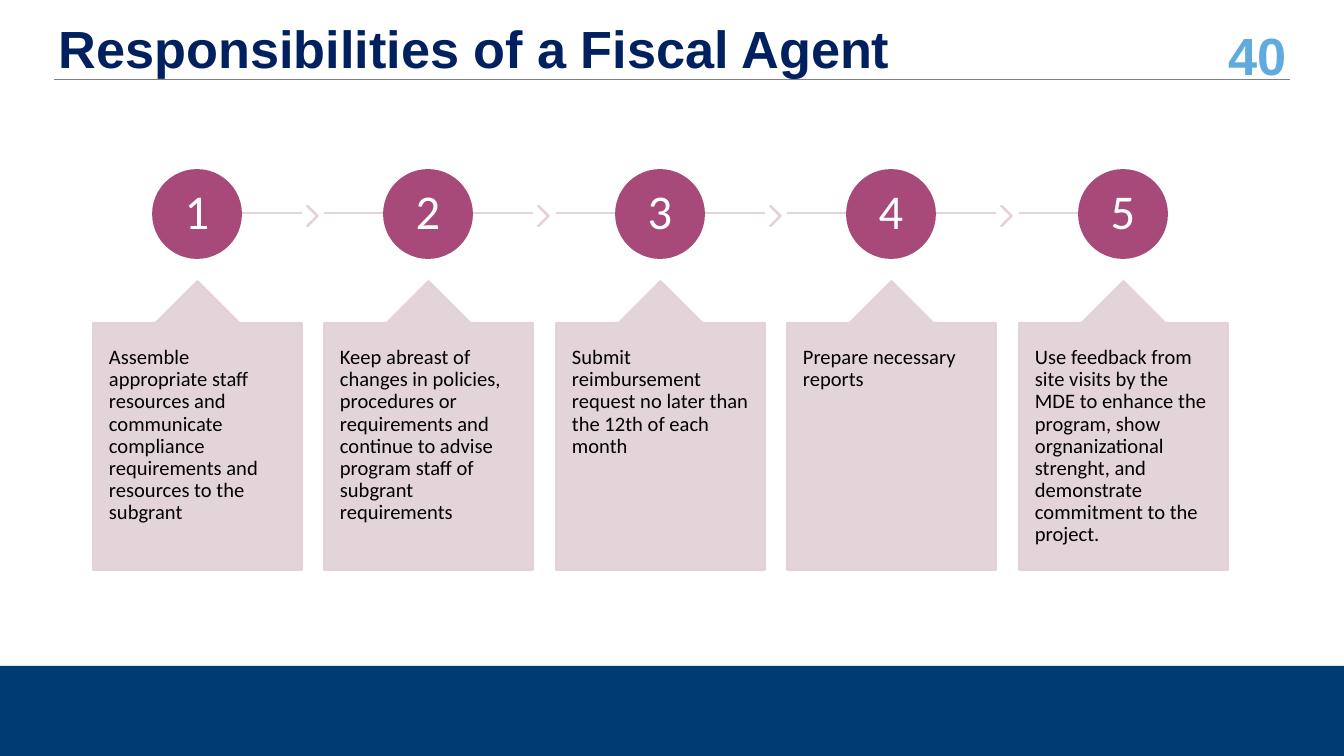
from lxml.etree import SubElement
from pptx import Presentation
from pptx.dml.color import RGBColor
from pptx.enum.shapes import MSO_CONNECTOR as LINE, MSO_SHAPE as SHAPE
from pptx.enum.text import MSO_ANCHOR as ANCHOR, MSO_AUTO_SIZE as FIT, PP_ALIGN as ALIGN
from pptx.oxml.ns import qn
from pptx.util import Emu, Pt

COLORS = {"navy": "002060", "bar": "003B71", "sky": "5FAADE", "gray": "808080",
          "plum": "A74979", "mauve": "E1D0D7", "white": "FFFFFF", "black": "000000"}

STEPS = [
    "Assemble appropriate staff resources and communicate compliance requirements "
    "and resources to the subgrant",
    "Keep abreast of changes in policies, procedures or requirements and continue "
    "to advise program staff of subgrant requirements",
    "Submit reimbursement request no later than the 12th of each month",
    "Prepare necessary reports",
    "Use feedback from site visits by the MDE to enhance the program, show "
    "orgnanizational strenght, and demonstrate commitment to the project.",
]


def px(n):
    return Emu(round(n * 914400 / 134.4))


class Deck:
    """Holds the style and the current slide, and draws each kind of element."""

    def __init__(self, width, height):
        self.prs = Presentation()
        self.prs.slide_width, self.prs.slide_height = px(width), px(height)
        self.s = self.prs.slides.add_slide(self.prs.slide_layouts[5])

    def color(self, name):
        return RGBColor.from_string(COLORS[name])

    def fade(self, sp, alpha):
        for clr in sp._element.spPr.iter(qn("a:srgbClr")):
            SubElement(clr, qn("a:alpha")).set("val", str(alpha * 1000))

    def fill_text(self, sp, text, size, color, font="Calibri", bold=False,
                  align=ALIGN.LEFT, anchor=ANCHOR.MIDDLE, insets=(13, 7), spacing=0.9):
        tf = sp.text_frame
        tf.word_wrap, tf.auto_size, tf.vertical_anchor = True, FIT.NONE, anchor
        tf.margin_left = tf.margin_right = px(insets[0])
        tf.margin_top = tf.margin_bottom = px(insets[1])
        p = tf.paragraphs[0]
        p.alignment, p.line_spacing = align, spacing
        r = p.add_run()
        r.text = text
        r.font.name, r.font.size, r.font.bold = font, Pt(size), bold
        r.font.color.rgb = self.color(color)

    def title(self, box, text):
        sp = self.s.shapes.title
        sp.left, sp.top, sp.width, sp.height = map(px, box)
        self.fill_text(sp, text, 28, "navy", "Arial", True)

    def text(self, box, text, size, color, **style):
        sp = self.s.shapes.add_textbox(*map(px, box))
        self.fill_text(sp, text, size, color, **style)

    def shape(self, kind, box, color, adjustments=(), alpha=100, outline=True):
        sp = self.s.shapes.add_shape(kind, *map(px, box))
        sp.shadow.inherit = False
        for i, value in enumerate(adjustments):
            sp.adjustments[i] = value
        sp.fill.solid()
        sp.fill.fore_color.rgb = self.color(color)
        if outline:
            sp.line.color.rgb = self.color(color)
            sp.line.width = Pt(1)
        else:
            sp.line.fill.background()
        if alpha < 100:
            self.fade(sp, alpha)
        return sp

    def line(self, x1, x2, y, color, width, alpha=100):
        cn = self.s.shapes.add_connector(LINE.STRAIGHT, px(x1), px(y), px(x2), px(y))
        cn.line.color.rgb = self.color(color)
        cn.line.width = Pt(width)
        SubElement(cn._element.spPr, qn("a:effectLst"))
        if alpha < 100:
            self.fade(cn, alpha)

    def step(self, i, count, text):
        left, width, circle = 93 + i * 463 // 2, 209, 88
        center = left + width // 2
        first, last = i == 0, i == count - 1
        self.line(center if first else left, center if last else left + width,
                  213, "mauve", 1, 90)
        if not last:
            self.shape(SHAPE.CHEVRON, (left + 214, 206, 11, 20), "mauve", [0.9], 90)
        sp = self.shape(SHAPE.OVAL, (center - circle // 2, 170, circle, circle), "plum")
        self.fill_text(sp, str(i + 1), 26, "white", align=ALIGN.CENTER, insets=(4, 4))
        sp = self.shape(SHAPE.UP_ARROW_CALLOUT, (left, 281, width, 289), "mauve",
                        [0.5, 0.2, 0.2, 1], 90)
        self.fill_text(sp, text, 11, "black", anchor=ANCHOR.TOP, insets=(16, 24))


def main():
    deck = Deck(1344, 756)
    deck.shape(SHAPE.RECTANGLE, (0, 666, 1344, 90), "bar", outline=False)
    deck.text((1181, 34, 116, 42), "40", 28, "sky", font="Arial", bold=True,
              align=ALIGN.RIGHT, insets=(10, 5), spacing=1.0)
    deck.line(54, 1290, 80, "gray", 0.5)
    deck.title((46, 31, 1169, 42), "Responsibilities of a Fiscal Agent")
    for i, text in enumerate(STEPS):
        deck.step(i, len(STEPS), text)
    deck.prs.save("out.pptx")


if __name__ == "__main__":
    main()
